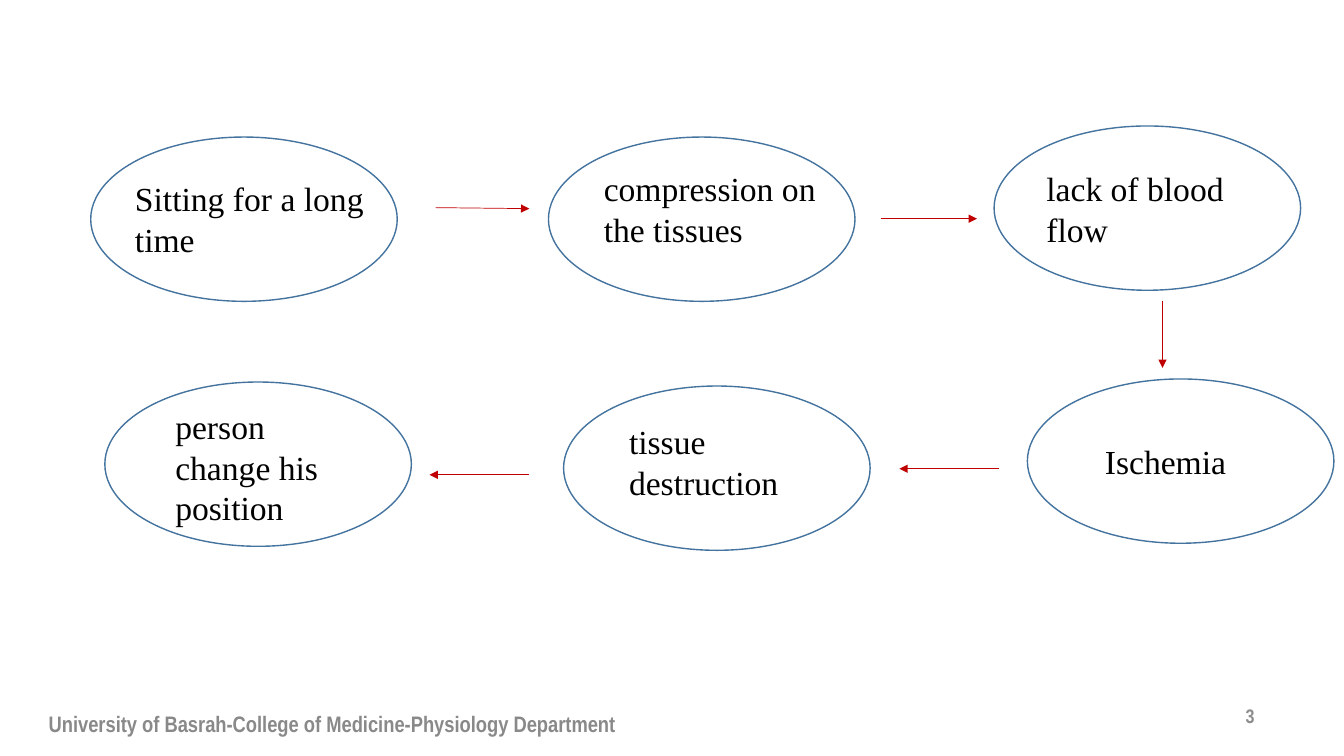
"""Build a slide showing how long sitting leads to a change of position."""
from lxml.etree import SubElement
from pptx import Presentation
from pptx.dml.color import RGBColor
from pptx.enum.shapes import MSO_CONNECTOR, MSO_SHAPE
from pptx.enum.text import MSO_ANCHOR, MSO_AUTO_SIZE, PP_ALIGN
from pptx.oxml.ns import qn
from pptx.util import Inches, Pt

SLIDE_SIZE = (13.33, 7.5)
OVAL_SIZE = (3.04, 1.63)
OVAL_COLOR, ARROW_COLOR = "43739E", "C00000"

STAGES = [
    ("Sitting for a long time", (0.9, 1.36), (1.24, 1.72, 2.59, 0.91)),
    ("compression on the tissues", (5.44, 1.36), (5.89, 1.62, 2.34, 0.91)),
    ("lack of blood flow", (9.86, 1.25), (10.28, 1.62, 2.62, 0.91)),
    ("Ischemia", (10.19, 3.76), (10.86, 4.33, 2.38, 0.5)),
    ("tissue destruction", (5.59, 3.83), (6.14, 4.13, 2.08, 0.91)),
    ("person change his position", (1.04, 3.79), (1.64, 3.98, 1.79, 1.72)),
]
ARROWS = [
    (4.32, 2.06, 5.25, 2.07),
    (8.74, 2.17, 9.69, 2.17),
    (11.53, 2.99, 11.53, 3.65),
    (9.91, 4.65, 8.92, 4.65),
    (5.25, 4.71, 4.26, 4.71),
]
STAGE_FONT = {"name": "Times New Roman", "size": Pt(24)}
STAGE_FRAME = {"word_wrap": True, "auto_size": MSO_AUTO_SIZE.SHAPE_TO_FIT_TEXT}
FOOTER_FRAME = {"word_wrap": True, "vertical_anchor": MSO_ANCHOR.MIDDLE}
FOOTERS = [
    ("University of Basrah-College of Medicine-Physiology Department",
     (0.2, 6.98, 6.19, 0.4), PP_ALIGN.CENTER, 16, "898989"),
    ("3", (10.15, 6.9, 2.39, 0.4), PP_ALIGN.RIGHT, 14, "8C8C8C"),
]


def inches(values):
    return [Inches(value) for value in values]


def color(hex_code):
    return RGBColor.from_string(hex_code)


def apply(target, formats):
    for name, value in formats.items():
        setattr(target, name, value)


def add_label(slide, wording, box, frame_format, font_format, hex_code, align):
    frame = slide.shapes.add_textbox(*inches(box)).text_frame
    apply(frame, frame_format)
    paragraph = frame.paragraphs[0]
    paragraph.alignment = align
    run = paragraph.add_run()
    run.text = wording
    apply(run.font, font_format)
    run.font.color.rgb = color(hex_code)


def add_oval(slide, corner):
    oval = slide.shapes.add_shape(MSO_SHAPE.OVAL, *inches(corner + OVAL_SIZE))
    oval.shadow.inherit = False
    oval.fill.background()
    oval.line.color.rgb = color(OVAL_COLOR)
    oval.line.width = Pt(1)


def add_arrow(slide, ends):
    arrow = slide.shapes.add_connector(MSO_CONNECTOR.STRAIGHT, *inches(ends))
    arrow.line.color.rgb = color(ARROW_COLOR)
    arrow.line.width = Pt(0.5)
    properties = arrow._element.spPr
    SubElement(properties.find(qn("a:ln")), qn("a:tailEnd"), type="triangle")
    SubElement(properties, qn("a:effectLst"))


def main():
    deck = Presentation()
    deck.slide_width, deck.slide_height = inches(SLIDE_SIZE)
    slide = deck.slides.add_slide(deck.slide_layouts[6])
    for wording, corner, box in STAGES:
        add_oval(slide, corner)
        add_label(slide, wording, box, STAGE_FRAME, STAGE_FONT, "000000",
                  PP_ALIGN.LEFT)
    for ends in ARROWS:
        add_arrow(slide, ends)
    for wording, box, align, size, hex_code in FOOTERS:
        footer_font = {"name": "Arial Narrow", "size": Pt(size), "bold": True}
        add_label(slide, wording, box, FOOTER_FRAME, footer_font, hex_code, align)
    deck.save("out.pptx")


if __name__ == "__main__":
    main()
